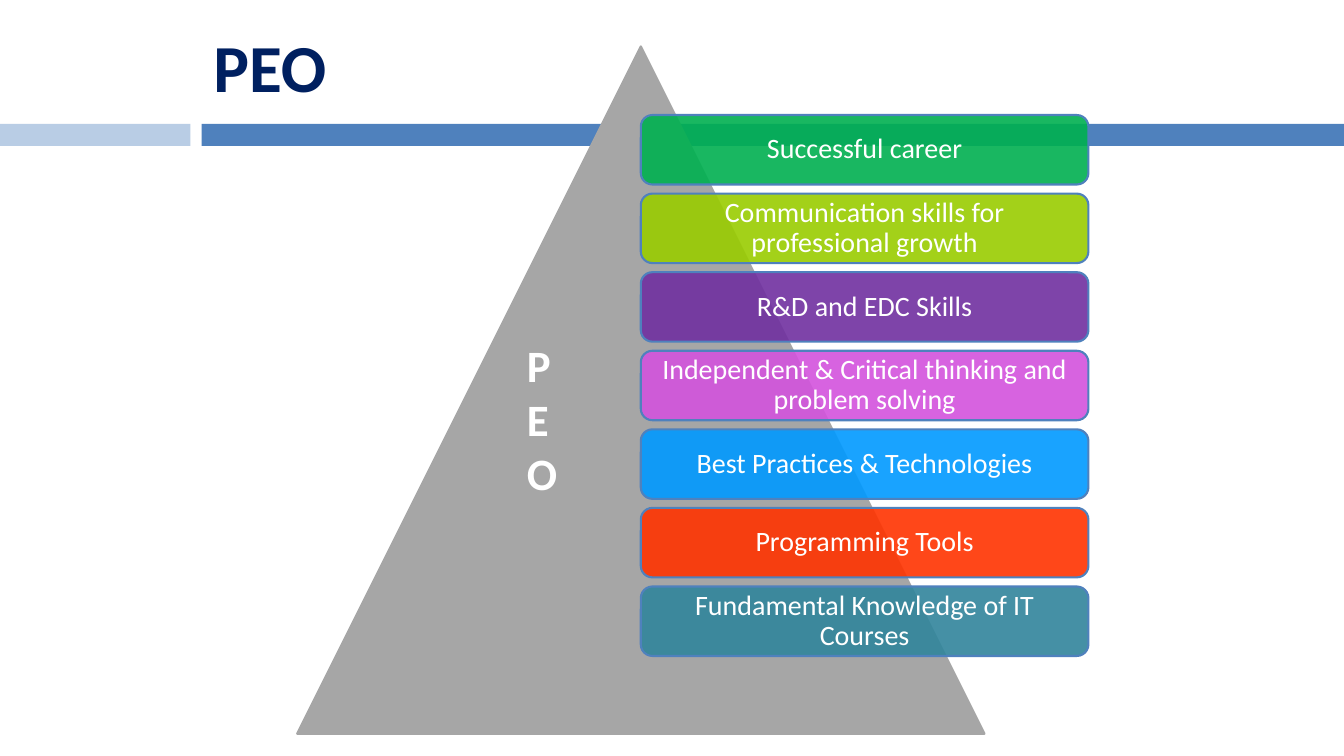
import pptx
import pptx.dml.color
import pptx.enum.shapes
import pptx.enum.text
import pptx.oxml.xmlchemy
import pptx.util
from pptx.util import Cm

RGBColor = pptx.dml.color.RGBColor
Kind = pptx.enum.shapes.MSO_SHAPE
Align = pptx.enum.text.PP_ALIGN
Anchor = pptx.enum.text.MSO_ANCHOR

WHITE = RGBColor(0xFF, 0xFF, 0xFF)
NAVY = RGBColor(0x00, 0x20, 0x60)
BLUE = RGBColor(0x4F, 0x81, 0xBD)
PALE = RGBColor(0xB9, 0xCD, 0xE5)
GRAY = RGBColor(0xA6, 0xA6, 0xA6)
GREEN = RGBColor(0x00, 0xB0, 0x50)
LIME = RGBColor(0x99, 0xCC, 0x00)
PURPLE = RGBColor(0x70, 0x30, 0xA0)
PINK = RGBColor(0xD3, 0x53, 0xDD)
SKY = RGBColor(0x00, 0x99, 0xFF)
RED = RGBColor(0xFF, 0x33, 0x00)
TEAL = RGBColor(0x31, 0x85, 0x9C)

GOALS = [
    ("Successful career", GREEN),
    ("Communication skills for professional growth", LIME),
    ("R&D and EDC Skills", PURPLE),
    ("Independent & Critical thinking and problem solving", PINK),
    ("Best Practices & Technologies", SKY),
    ("Programming Tools", RED),
    ("Fundamental Knowledge of IT Courses", TEAL),
]


def apply(target, values):
    for name, value in values.items():
        setattr(target, name, value)


def write(frame, text, size, color, bold, align, pads, wrap=True):
    side, edge = pads
    apply(frame, {
        "text": text, "word_wrap": wrap, "vertical_anchor": Anchor.MIDDLE,
        "margin_left": side, "margin_right": side,
        "margin_top": edge, "margin_bottom": edge,
    })
    line = frame.paragraphs[0]
    line.alignment = align
    apply(line.font, {"name": "Calibri", "size": pptx.util.Pt(size), "bold": bold})
    line.font.color.rgb = color
    return line


def block(slide, kind, box, fill, edge=None):
    shape = slide.shapes.add_shape(kind, *box)
    shape.shadow.inherit = False
    shape.fill.solid()
    shape.fill.fore_color.rgb = fill
    if edge is None:
        shape.line.fill.background()
    else:
        shape.line.color.rgb = edge
        shape.line.width = pptx.util.Pt(1.5)
    return shape


def header(slide, left, top, width, height):
    start = left + Cm(5.08)
    title = slide.shapes.title
    apply(title, {"left": start, "top": top + Cm(0.38),
                  "width": Cm(28.5), "height": Cm(2.54)})
    write(title.text_frame, "PEO", 48, NAVY, True, Align.LEFT, (Cm(0.3), Cm(0.15)))
    bar = Cm(0.56)
    base = top + height - bar
    block(slide, Kind.RECTANGLE, (left, base, Cm(4.8), bar), PALE)
    block(slide, Kind.RECTANGLE, (start, base, left + width - start, bar), BLUE)


def goals(slide, left, top, width, height):
    pitch = Cm(1.98)
    for row, (text, color) in enumerate(GOALS):
        box = (left, top + row * pitch, width, height)
        card = block(slide, Kind.ROUNDED_RECTANGLE, box, color, BLUE)
        tint = card.fill._xPr.find(".//" + pptx.oxml.ns.qn("a:srgbClr"))
        alpha = tint.makeelement(pptx.oxml.ns.qn("a:alpha"), {"val": "90000"})
        tint.append(alpha)
        line = write(card.text_frame, text, 20, WHITE, False, Align.CENTER,
                     (Cm(0.28), Cm(0.2)))
        line.line_spacing = 0.9


def pyramid(slide, left, top, side):
    block(slide, Kind.ISOSCELES_TRIANGLE, (left, top, side, side), GRAY, GRAY)
    goals(slide, left + side // 2, top + Cm(1.73), Cm(11.28), Cm(1.75))
    label = slide.shapes.add_textbox(left + Cm(5.54), top + Cm(7.21),
                                     Cm(2.13), Cm(5.11))
    frame = label.text_frame
    write(frame, "PEO", 32, WHITE, True, Align.LEFT, (Cm(0.25), Cm(0.13)), False)
    frame.vertical_anchor = Anchor.TOP
    frame.auto_size = pptx.enum.text.MSO_AUTO_SIZE.SHAPE_TO_FIT_TEXT
    frame._txBody.bodyPr.set("vert", "wordArtVert")


def main():
    deck = pptx.Presentation()
    apply(deck, {"slide_width": Cm(33.87), "slide_height": Cm(19.05)})
    slide = deck.slides.add_slide(deck.slide_layouts[5])
    header(slide, 0, 0, deck.slide_width, Cm(3.68))
    pyramid(slide, Cm(7.49), Cm(1.17), Cm(17.32))
    deck.save("out.pptx")


if __name__ == "__main__":
    main()
